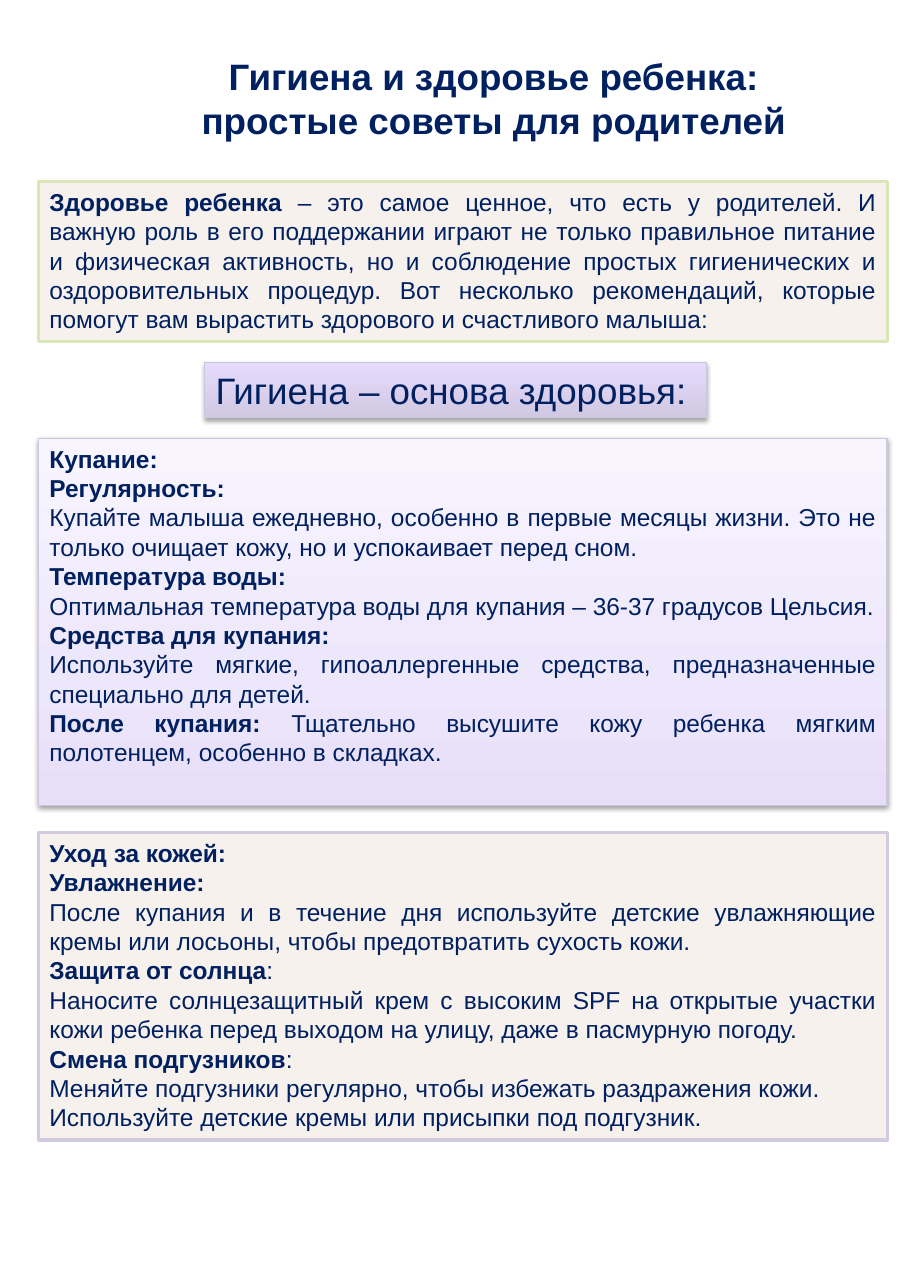
from lxml.etree import SubElement
from pptx import Presentation
from pptx.dml.color import RGBColor
from pptx.enum.shapes import MSO_SHAPE
from pptx.enum.text import MSO_ANCHOR, PP_ALIGN
from pptx.oxml.ns import qn
from pptx.util import Cm, Pt

COLORS = {
    "text": "002060",
    "cream": "F7F1EE",
    "green": "D9E6B6",
    "lilac": "D2CBE0",
    "lilac_edge": "CDC6DC",
    "shadow": "000000",
}
BANNER_STOPS = [(0, "D1C8E3"), (100, "E6DBFC")]
BATHING_STOPS = [(0, "E7DEF9"), (35, "EDE7FB"), (100, "F8F5FE")]
LEFT, WIDTH = 0.89, 19.56
JUSTIFY, START = PP_ALIGN.JUSTIFY, PP_ALIGN.LEFT


def bold(text):
    return text, True


def plain(text):
    return text, False


class Leaflet:
    font = "Arial"

    def __init__(self, slide):
        self.slide = slide

    def add_text(self, shape, paragraphs, size):
        """Fill a shape with (alignment, runs) paragraphs."""
        frame = shape.text_frame
        frame.word_wrap = True
        frame.vertical_anchor = MSO_ANCHOR.TOP
        for index, (alignment, runs) in enumerate(paragraphs):
            paragraph = frame.add_paragraph() if index else frame.paragraphs[0]
            paragraph.alignment = alignment
            for text, is_bold in runs:
                run = paragraph.add_run()
                run.text = text
                run.font.name = self.font
                run.font.size = Pt(size)
                run.font.bold = is_bold
                run.font.color.rgb = RGBColor.from_string(COLORS["text"])

    def title(self, left, top, width, height, text):
        box = self.slide.shapes.add_textbox(Cm(left), Cm(top), Cm(width), Cm(height))
        self.add_text(box, [(PP_ALIGN.CENTER, [bold(text)])], 24)

    def panel(self, left, top, width, height, edge, edge_width, paragraphs, size=16):
        shape = self.slide.shapes.add_shape(
            MSO_SHAPE.RECTANGLE, Cm(left), Cm(top), Cm(width), Cm(height))
        shape.fill.solid()
        shape.fill.fore_color.rgb = RGBColor.from_string(COLORS["cream"])
        shape.line.color.rgb = RGBColor.from_string(COLORS[edge])
        shape.line.width = Pt(edge_width)
        shape.shadow.inherit = False
        self.add_text(shape, paragraphs, size)
        return shape

    def raised_panel(self, left, top, width, height, stops, opacity, distance,
                     paragraphs, size=16):
        """Panel with an upward gradient and a soft shadow below."""
        shape = self.panel(left, top, width, height, "lilac_edge", 0.75, paragraphs, size)
        shape.fill.gradient()
        shape.fill.gradient_angle = 90
        properties = shape.element.spPr
        stop_list = properties.find(qn("a:gradFill")).find(qn("a:gsLst"))
        for stop in list(stop_list):
            stop_list.remove(stop)
        for position, color in stops:
            stop = SubElement(stop_list, qn("a:gs"), pos=str(position * 1000))
            SubElement(stop, qn("a:srgbClr"), val=color)
        shadow = SubElement(
            properties.find(qn("a:effectLst")), qn("a:outerShdw"),
            blurRad=str(Pt(3.1)), dist=str(Pt(distance)), dir="5400000", rotWithShape="0")
        color = SubElement(shadow, qn("a:srgbClr"), val=COLORS["shadow"])
        SubElement(color, qn("a:alpha"), val=str(opacity * 1000))


def main():
    presentation = Presentation()
    presentation.slide_width = Cm(21)
    presentation.slide_height = Cm(29.7)
    leaflet = Leaflet(presentation.slides.add_slide(presentation.slide_layouts[6]))

    leaflet.title(3.71, 1.12, 15.34, 2.31,
                  "Гигиена и здоровье ребенка: простые советы для родителей")
    leaflet.panel(LEFT, 4.19, WIDTH, 3.68, "green", 2, [
        (JUSTIFY, [
            bold("Здоровье ребенка "),
            plain("– это самое ценное, что есть у родителей. И важную роль в его "
                  "поддержании играют не только правильное питание и физическая "
                  "активность, но и соблюдение простых гигиенических и оздоровительных "
                  "процедур. Вот несколько рекомендаций, которые помогут вам вырастить "
                  "здорового и счастливого малыша:")]),
    ])
    leaflet.raised_panel(4.72, 8.36, 11.56, 1.27, BANNER_STOPS, 35, 1.8, [
        (START, [plain("Гигиена – основа здоровья:")]),
    ], size=24)
    leaflet.raised_panel(LEFT, 10.11, WIDTH, 8.46, BATHING_STOPS, 38, 1.6, [
        (JUSTIFY, [bold("Купание:")]),
        (JUSTIFY, [bold("Регулярность: ")]),
        (JUSTIFY, [plain("Купайте малыша ежедневно, особенно в первые месяцы жизни. Это "
                         "не только очищает кожу, но и успокаивает перед сном.")]),
        (JUSTIFY, [bold("Температура воды: ")]),
        (JUSTIFY, [plain("Оптимальная температура воды для купания – 36-37 градусов "
                         "Цельсия.")]),
        (JUSTIFY, [bold("Средства для купания: ")]),
        (JUSTIFY, [plain("Используйте мягкие, гипоаллергенные средства, предназначенные "
                         "специально для детей.")]),
        (JUSTIFY, [bold("После купания: "),
                   plain("Тщательно высушите кожу ребенка мягким полотенцем, особенно "
                         "в складках.")]),
    ])
    leaflet.panel(LEFT, 19.2, WIDTH, 7.09, "lilac", 2, [
        (JUSTIFY, [bold("Уход за кожей:")]),
        (JUSTIFY, [bold("Увлажнение: ")]),
        (JUSTIFY, [plain("После купания и в течение дня используйте детские увлажняющие "
                         "кремы или лосьоны, чтобы предотвратить сухость кожи.")]),
        (JUSTIFY, [bold("Защита от солнца"), plain(": ")]),
        (JUSTIFY, [plain("Наносите солнцезащитный крем с высоким SPF на открытые участки "
                         "кожи ребенка перед выходом на улицу, даже в пасмурную погоду.")]),
        (START, [bold("Смена подгузников"), plain(":")]),
        (START, [plain("Меняйте подгузники регулярно, чтобы избежать раздражения кожи. "
                       "Используйте детские кремы или присыпки под подгузник.")]),
    ])
    presentation.save("out.pptx")


if __name__ == "__main__":
    main()
